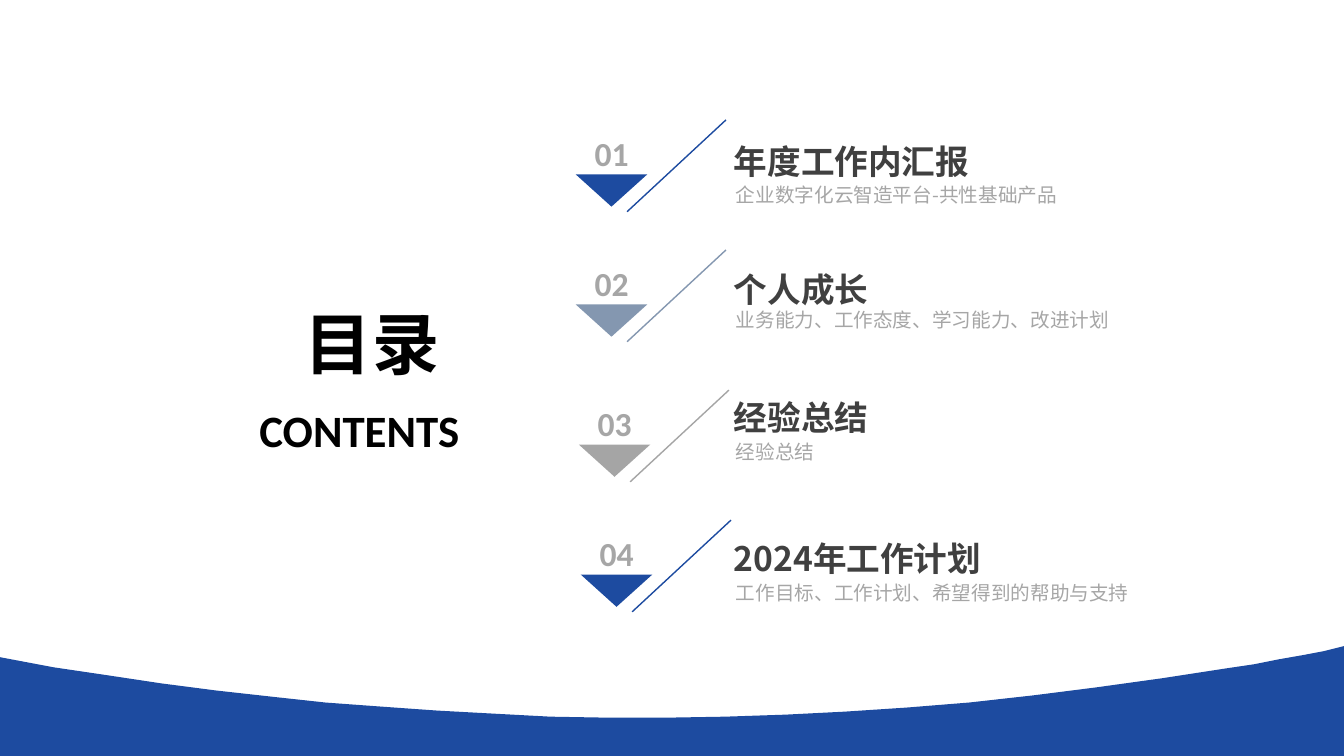
from lxml import etree
from pptx import Presentation
from pptx import util as u
from pptx.dml import color
from pptx.enum import shapes, text
from pptx.oxml import ns

PX = 9144
WIDTH, HEIGHT = 1333, 750
CJK, LATIN = "Noto Sans CJK SC", "Calibri"
BLUE, SLATE, GRAY = "1D4BA0", "8497B0", "A5A5A5"
BLACK, DARK, PALE = "000000", "404040", "A6A6A6"

CURVE = [
    (0, 652), (53, 662), (107, 670), (160, 678), (214, 685), (268, 691),
    (323, 697), (378, 701), (434, 705), (490, 708), (546, 711), (603, 712),
    (661, 712), (719, 711), (779, 709), (838, 706), (899, 702), (961, 697),
    (1024, 690), (1087, 682), (1152, 673), (1217, 663), (1244, 659),
    (1269, 654), (1292, 650), (1313, 646), (1333, 641),
]

CHAPTERS = [
    ((571, 173), 123, 177, BLUE, "年度工作内汇报", "企业数字化云智造平台-共性基础产品"),
    ((571, 302), 250, 301, SLATE, "个人成长", "业务能力、工作态度、学习能力、改进计划"),
    ((574, 441), 377, 432, GRAY, "经验总结", "经验总结"),
    ((576, 570), 517, 571, BLUE, "2024年工作计划", "工作目标、工作计划、希望得到的帮助与支持"),
]


def px(*lengths):
    return [u.Emu(length * PX) for length in lengths]


def rgb(value):
    return color.RGBColor.from_string(value)


def paint(shape, fill):
    shape.shadow.inherit = False
    shape.fill.solid()
    shape.fill.fore_color.rgb = rgb(fill)
    shape.line.fill.background()


def write(slide, box, words, size, ink, font=CJK, bold=False, centred=False,
          anchor=text.MSO_ANCHOR.TOP, inset=(0, 0), spacing=1.0, holder=None):
    holder = holder or slide.shapes.add_textbox(*px(*box))
    holder.left, holder.top, holder.width, holder.height = px(*box)
    frame = holder.text_frame
    frame.word_wrap = True
    frame.auto_size = text.MSO_AUTO_SIZE.NONE
    frame.vertical_anchor = anchor
    frame.margin_left = frame.margin_right = u.Emu(inset[0] * PX)
    frame.margin_top = frame.margin_bottom = u.Emu(inset[1] * PX)
    line = frame.paragraphs[0]
    line.alignment = text.PP_ALIGN.CENTER if centred else text.PP_ALIGN.LEFT
    line.line_spacing = spacing
    run = line.add_run()
    run.text = words
    run.font.size = u.Pt(size)
    run.font.bold = bold
    run.font.color.rgb = rgb(ink)
    run.font.name = font
    east_asian = etree.SubElement(run.font._element, ns.qn("a:ea"))
    east_asian.set("typeface", font)


def add_wave(slide, points):
    start, *rest = points
    outline = slide.shapes.build_freeform(*start, scale=PX)
    outline.add_line_segments(rest + [(WIDTH, HEIGHT), (0, HEIGHT)], close=True)
    paint(outline.convert_to_shape(), BLUE)


def add_heading(slide, x, y):
    write(slide, (x + 81, y, 214, 81), "目录", 48, BLACK, bold=True, centred=True,
          anchor=text.MSO_ANCHOR.MIDDLE, holder=slide.shapes.title)
    write(slide, (x, y + 101, 351, 54), "CONTENTS", 32, BLACK, font=LATIN,
          bold=True, centred=True)


def add_marker(slide, x, y, number, tint):
    slash = slide.shapes.add_connector(
        shapes.MSO_CONNECTOR.STRAIGHT, *px(x + 149, y - 54, x + 51, y + 37))
    slash.line.color.rgb = rgb(tint)
    slash.line.width = u.Pt(1)
    etree.SubElement(slash._element.spPr, ns.qn("a:effectLst"))
    triangle = slide.shapes.add_shape(
        shapes.MSO_SHAPE.FLOWCHART_MERGE, *px(x, y, 71, 32))
    paint(triangle, tint)
    write(slide, (x - 2, y - 41, 75, 40), f"{number:02d}", 24, PALE, font=LATIN,
          bold=True, centred=True, anchor=text.MSO_ANCHOR.BOTTOM)


def add_chapter(slide, number, corner, title_top, summary_top, tint, title, summary):
    add_marker(slide, *corner, number, tint)
    write(slide, (718, title_top, 360, 62), title, 24, DARK, bold=True,
          inset=(10, 5), spacing=1.3)
    write(slide, (720, summary_top, 460, 34), summary, 14, PALE, inset=(10, 5))


def main():
    deck = Presentation()
    deck.slide_width, deck.slide_height = px(WIDTH, HEIGHT)
    contents = deck.slides.add_slide(deck.slide_layouts[5])
    add_wave(contents, CURVE)
    add_heading(contents, 181, 299)
    for number, chapter in enumerate(CHAPTERS, start=1):
        add_chapter(contents, number, *chapter)
    deck.save("out.pptx")


if __name__ == "__main__":
    main()
